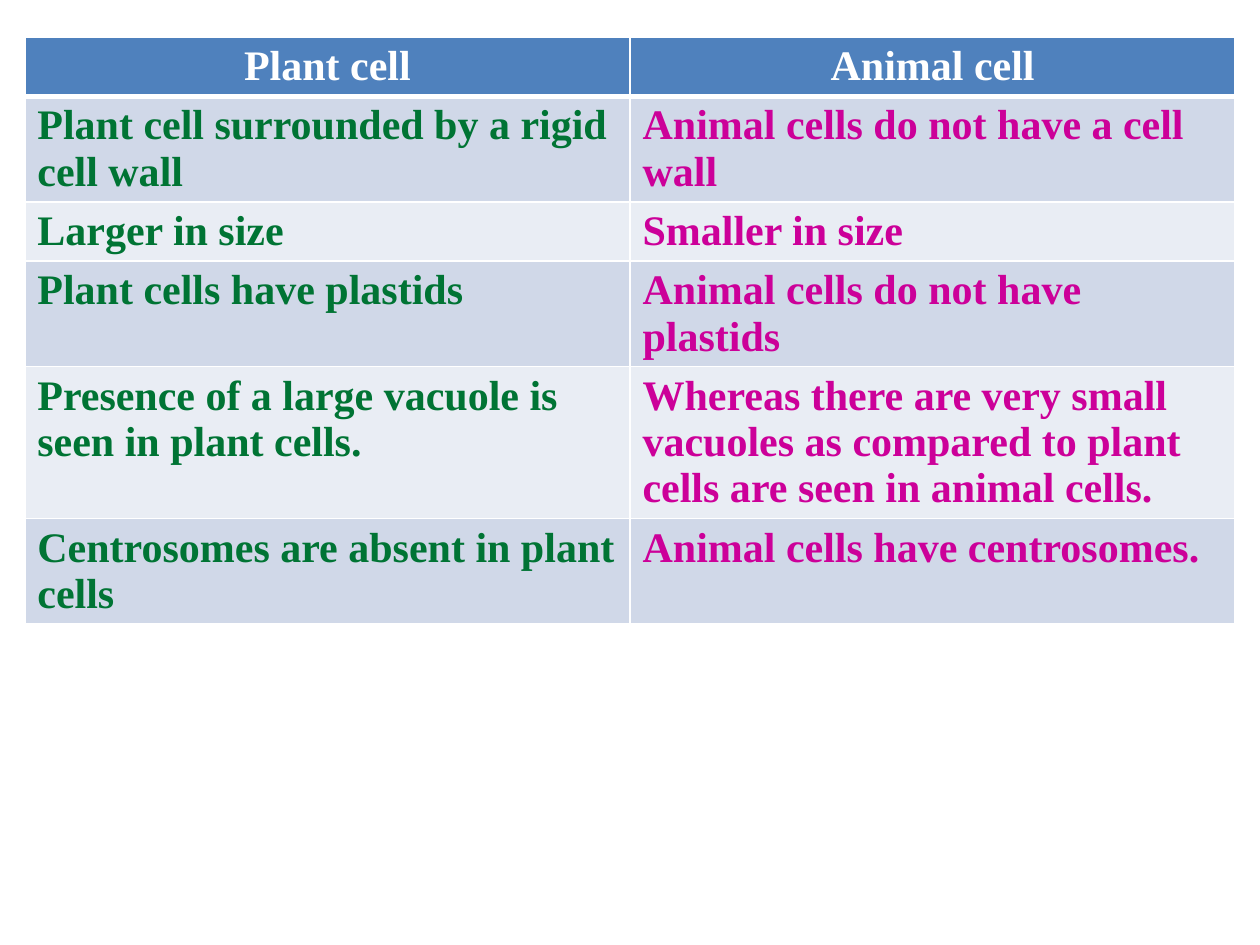
from lxml.etree import SubElement
from pptx import Presentation
from pptx.dml.color import RGBColor
from pptx.enum.text import PP_ALIGN
from pptx.oxml.ns import qn
from pptx.util import Cm, Pt

WHITE = RGBColor(0xFF, 0xFF, 0xFF)
BLUE = RGBColor(0x4F, 0x81, 0xBD)
BAND_DARK = RGBColor(0xD0, 0xD8, 0xE8)
BAND_LIGHT = RGBColor(0xE9, 0xED, 0xF4)
GREEN = RGBColor(0x00, 0x74, 0x34)
MAGENTA = RGBColor(0xCC, 0x00, 0x99)

COMPARISON = [
    ("Plant cell", "Animal cell"),
    ("Plant cell surrounded by a rigid cell wall", "Animal cells do not have a cell wall"),
    ("Larger in size", "Smaller in size"),
    ("Plant cells have plastids", "Animal cells do not have plastids"),
    ("Presence of a large vacuole is seen in plant cells.",
     "Whereas there are very small vacuoles as compared to plant cells "
     "are seen in animal cells."),
    ("Centrosomes are absent in plant cells", "Animal cells have centrosomes."),
]


class SlideBuilder:
    font_name = "Times New Roman"
    font_size = Pt(24)
    thin, thick = Pt(1), Pt(3)

    def __init__(self, slide):
        self.slide = slide

    def border(self, cell, side, width):
        line = SubElement(cell._tc.get_or_add_tcPr(), qn(f"a:ln{side}"), w=str(width))
        fill = SubElement(line, qn("a:solidFill"))
        SubElement(fill, qn("a:srgbClr"), val=str(WHITE))

    def cell(self, cell, text, fill, color, alignment, top, bottom):
        # Borders come before the fill in the cell properties
        for side, width in zip("LRTB", (self.thin, self.thin, top, bottom)):
            self.border(cell, side, width)
        cell.fill.solid()
        cell.fill.fore_color.rgb = fill
        cell.text = text
        paragraph = cell.text_frame.paragraphs[0]
        paragraph.alignment = alignment
        font = paragraph.font
        font.name, font.size, font.bold = self.font_name, self.font_size, True
        font.color.rgb = color

    def table(self, rows, column_colors, left, top, width, height, header_height, row_height):
        shape = self.slide.shapes.add_table(
            len(rows), len(column_colors), left, top, width, height)
        table = shape.table
        for row_index, texts in enumerate(rows):
            header = row_index == 0
            table.rows[row_index].height = header_height if header else row_height
            fill = BLUE if header else (BAND_LIGHT, BAND_DARK)[row_index % 2]
            top_width = self.thick if row_index == 1 else self.thin
            bottom_width = self.thick if header else self.thin
            for column_index, text in enumerate(texts):
                self.cell(
                    table.cell(row_index, column_index), text, fill,
                    WHITE if header else column_colors[column_index],
                    PP_ALIGN.CENTER if header else PP_ALIGN.LEFT,
                    top_width, bottom_width)
        shape.height = height


def main():
    presentation = Presentation()
    presentation.slide_width, presentation.slide_height = Cm(25.4), Cm(19.05)
    builder = SlideBuilder(presentation.slides.add_slide(presentation.slide_layouts[6]))

    # Comparison of plant and animal cells
    builder.table(COMPARISON, (GREEN, MAGENTA), Cm(0.5), Cm(0.75), Cm(24.4), Cm(12.7),
                  header_height=Cm(0.87), row_height=Cm(1.04))

    presentation.save("out.pptx")


if __name__ == "__main__":
    main()
